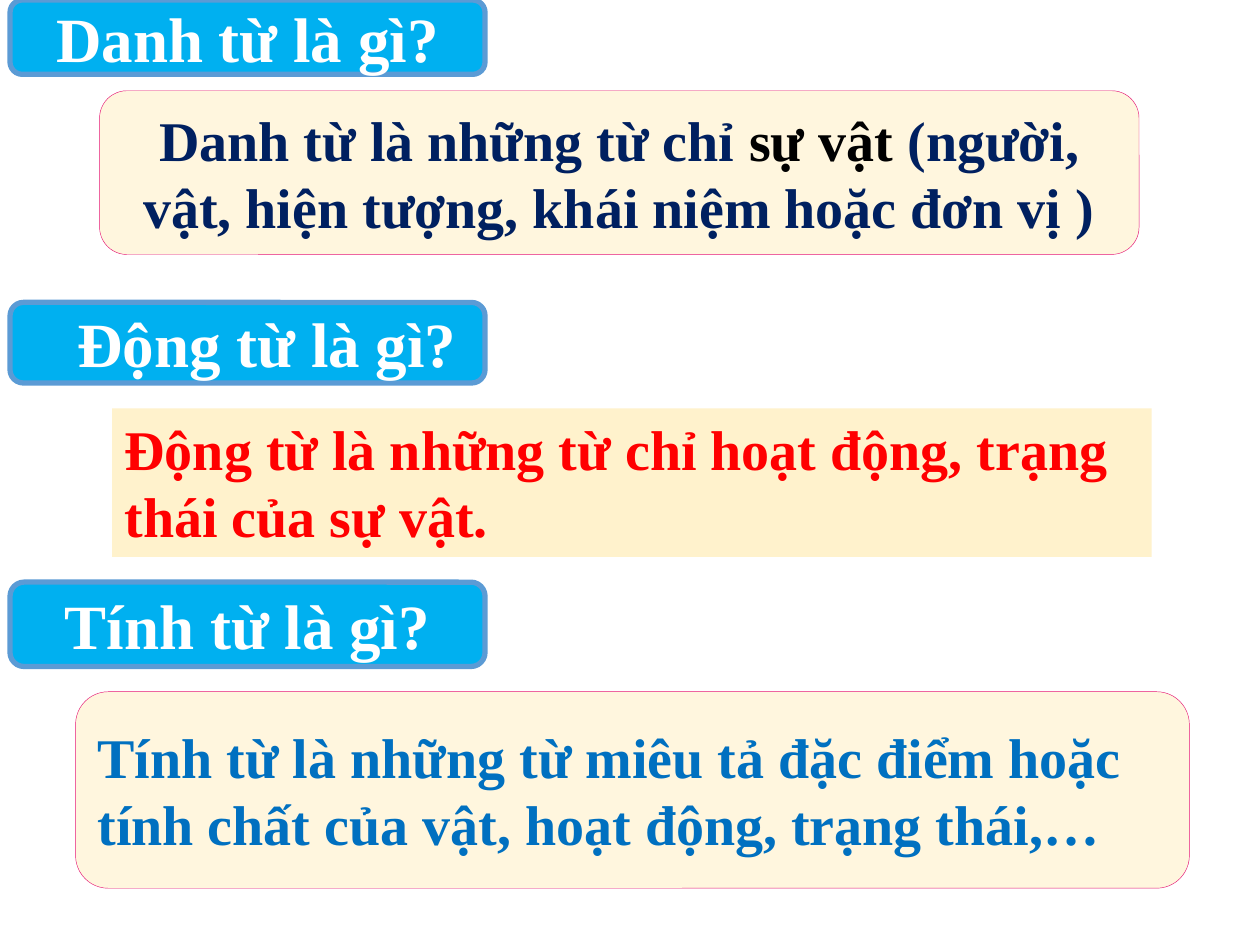
from lxml.etree import SubElement
from pptx import Presentation
from pptx.dml.color import RGBColor
from pptx.enum.shapes import MSO_SHAPE as Shape
from pptx.enum.text import MSO_ANCHOR as Anchor, MSO_AUTO_SIZE as AutoSize, PP_ALIGN as Align
from pptx.oxml.ns import qn
from pptx.util import Inches, Pt

SLIDE_WIDTH, SLIDE_HEIGHT = Inches(10), Inches(7.5)
FONT = "Times New Roman"
QUESTION_FILL, QUESTION_LINE, QUESTION_TEXT = "00B0F0", "5B9BD5", "FFFFFF"
ANSWER_FILL, ANSWER_LINE = "FFF2CC", "E51674"
NAVY, BLACK, RED, BLUE = "002060", "000000", "FF0000", "0070C0"


def color(hex_code):
    return RGBColor.from_string(hex_code)


def add_box(slide, kind, area, fill):
    """Add a plain box; area is left, top, width, height in percent of the slide."""
    left, top, width, height = area
    box = slide.shapes.add_shape(
        kind,
        int(SLIDE_WIDTH * left / 100), int(SLIDE_HEIGHT * top / 100),
        int(SLIDE_WIDTH * width / 100), int(SLIDE_HEIGHT * height / 100))
    box.shadow.inherit = False
    box.fill.solid()
    box.fill.fore_color.rgb = color(fill)
    box.line.fill.background()
    box.text_frame.word_wrap = True
    box.text_frame.vertical_anchor = Anchor.MIDDLE
    return box


def outline(box, line_color, points):
    box.line.color.rgb = color(line_color)
    box.line.width = Pt(points)


def make_translucent(box, percent):
    fill_color = box.fill._xPr.find(qn("a:solidFill"))[0]
    SubElement(fill_color, qn("a:alpha"), val=str(percent * 1000))


def write(box, parts, size, align):
    """Fill the box with one bold paragraph made of (text, colour) parts."""
    paragraph = box.text_frame.paragraphs[0]
    paragraph.alignment = align
    font = paragraph.font
    font.name, font.size, font.bold = FONT, Pt(size), True
    if len(parts) == 1:
        font.color.rgb = color(parts[0][1])
    for text, text_color in parts:
        run = paragraph.add_run()
        run.text = text
        if len(parts) > 1:
            run.font.color.rgb = color(text_color)
    return paragraph


def add_question(slide, top, height, text, indent=0):
    question = add_box(slide, Shape.ROUNDED_RECTANGLE, (0.8, top, 37.7, height), QUESTION_FILL)
    outline(question, QUESTION_LINE, 3)
    paragraph = write(question, [(text, QUESTION_TEXT)], 36, Align.CENTER)
    if indent:
        properties = paragraph._p.get_or_add_pPr()
        properties.set("marL", str(Inches(indent)))
        properties.set("indent", "0")


def add_rounded_answer(slide, area, parts, align):
    answer = add_box(slide, Shape.ROUNDED_RECTANGLE, area, ANSWER_FILL)
    make_translucent(answer, 63)
    outline(answer, ANSWER_LINE, 0.25)
    write(answer, parts, 32, align)


def add_plain_answer(slide, area, parts):
    answer = add_box(slide, Shape.RECTANGLE, area, ANSWER_FILL)
    answer.text_frame.vertical_anchor = Anchor.TOP
    answer.text_frame.auto_size = AutoSize.SHAPE_TO_FIT_TEXT
    write(answer, parts, 32, Align.LEFT)


def main():
    presentation = Presentation()
    presentation.slide_width, presentation.slide_height = SLIDE_WIDTH, SLIDE_HEIGHT
    slide = presentation.slides.add_slide(presentation.slide_layouts[6])

    add_question(slide, 0, 7.87, "Danh từ là gì?")
    add_rounded_answer(slide, (7.9, 9.6, 82.5, 17.33), [
        ("Danh từ là những từ chỉ ", NAVY),
        ("sự vật ", BLACK),
        ("(người, vật, hiện tượng, khái niệm hoặc đơn vị )", NAVY),
    ], Align.CENTER)

    add_question(slide, 32, 8.53, "Động từ là gì?", indent=0.31)
    add_plain_answer(slide, (8.9, 43.2, 82.5, 15.73), [
        ("Động từ là những từ chỉ hoạt động, trạng thái của sự vật.", RED),
    ])

    add_question(slide, 61.6, 8.93, "Tính từ là gì?")
    add_rounded_answer(slide, (6, 73.2, 88.4, 20.8), [
        ("Tính từ là những từ miêu tả đặc điểm hoặc tính chất của vật, "
         "hoạt động, trạng thái,…", BLUE),
    ], Align.LEFT)

    presentation.save("out.pptx")


if __name__ == "__main__":
    main()
